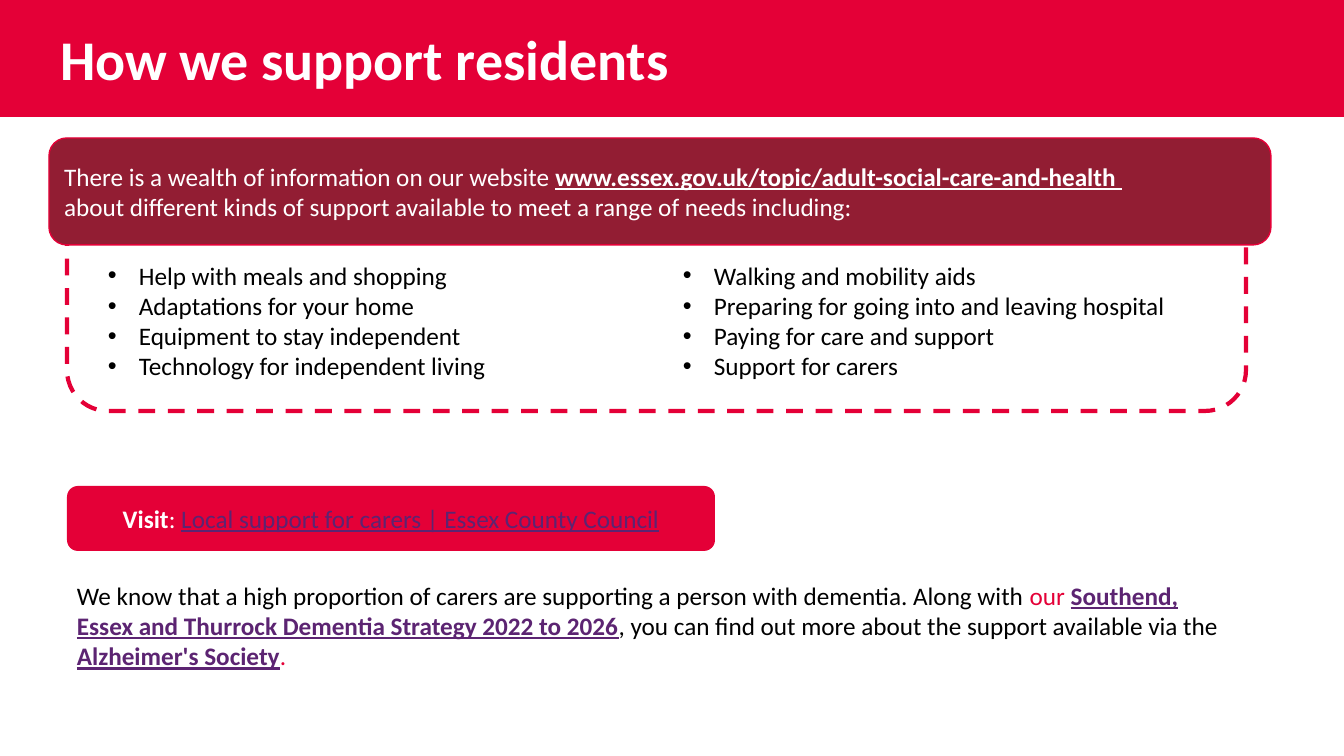
from lxml import etree
from pptx import Presentation
from pptx import util as u
from pptx.dml.color import RGBColor
from pptx.enum import dml, shapes, text
from pptx.oxml.ns import qn

RED = RGBColor(0xE4, 0x00, 0x37)
WINE = RGBColor(0x92, 0x1D, 0x33)
PLUM = RGBColor(0x5C, 0x24, 0x72)
WHITE = RGBColor(0xFF, 0xFF, 0xFF)
BLACK = RGBColor(0x00, 0x00, 0x00)
RECT = shapes.MSO_SHAPE.RECTANGLE
ROUND = shapes.MSO_SHAPE.ROUNDED_RECTANGLE


def px(n):
    """Turn pixels into EMU."""
    return u.Inches(n / 100.8)


def run(words, **form):
    """Pair some words with their format."""
    return words, form


class Deck:
    """Hold the style and the current slide."""

    def __init__(self, font, size):
        """Start a deck with one blank slide."""
        self.font, self.size = font, size
        self.show = Presentation()
        self.show.slide_width, self.show.slide_height = px(1344), px(756)
        self.slide = self.show.slides.add_slide(self.show.slide_layouts[6])

    def label(self, frame, lines, color, align=text.PP_ALIGN.LEFT, mark=None):
        """Fill a frame with lines, each a list of runs."""
        frame.word_wrap = True
        for i, line in enumerate(lines):
            para = frame.add_paragraph() if i else frame.paragraphs[0]
            para.alignment = align
            if mark:
                props = para._p.get_or_add_pPr()
                props.set("marL", str(px(31)))
                props.set("indent", str(-px(31)))
                face = etree.SubElement(props, qn("a:buFont"))
                face.set("typeface", "Arial")
                etree.SubElement(props, qn("a:buChar")).set("char", mark)
            for words, form in line:
                part = para.add_run()
                part.text = words
                font = part.font
                font.name = self.font
                font.size = u.Pt(form.get("size", self.size))
                font.bold = form.get("bold", False)
                font.underline = form.get("under", False)
                font.color.rgb = form.get("color", color)

    def box(self, kind, spot, fill=None, line=None, width=1, dash=None):
        """Add a preset shape and return its text frame."""
        shape = self.slide.shapes.add_shape(kind, *map(px, spot))
        shape.shadow.inherit = False
        if fill is None:
            shape.fill.background()
        else:
            shape.fill.solid()
            shape.fill.fore_color.rgb = fill
        if line is None:
            shape.line.fill.background()
        else:
            shape.line.color.rgb = line
            shape.line.width = u.Pt(width)
            shape.line.dash_style = dash
        frame = shape.text_frame
        frame.vertical_anchor = text.MSO_ANCHOR.MIDDLE
        return frame

    def note(self, spot, lines, cols=1, mark=None):
        """Add a text box, in columns if asked."""
        shape = self.slide.shapes.add_textbox(*map(px, spot))
        if cols > 1:
            shape.element.txBody.bodyPr.set("numCol", str(cols))
        self.label(shape.text_frame, lines, BLACK, mark=mark)


def main():
    """Build the slide and save it."""
    deck = Deck("Calibri", 18)
    link = {"color": PLUM, "bold": True, "under": True}

    deck.box(ROUND, (67, 166, 1179, 245), line=RED, width=3,
             dash=dml.MSO_LINE.DASH)
    topics = ["Help with meals and shopping", "Adaptations for your home",
              "Equipment to stay independent",
              "Technology for independent living",
              "Walking and mobility aids",
              "Preparing for going into and leaving hospital",
              "Paying for care and support", "Support for carers"]
    deck.note((98, 255, 1170, 107), [[run(t)] for t in topics],
              cols=2, mark="•")

    title = deck.box(RECT, (0, 0, 1344, 117), fill=RED)
    title.margin_left = px(60)
    deck.label(title, [[run("How we support residents", size=40, bold=True)]],
               WHITE)

    intro = deck.box(ROUND, (49, 138, 1222, 107), fill=WINE, line=RED)
    deck.label(intro, [
        [run("There is a wealth of information on our website "),
         run("www.essex.gov.uk/topic/adult-social-care-and-health ",
             bold=True, under=True)],
        [run("about different kinds of support available to meet "
             "a range of needs including:")]], WHITE)

    visit = deck.box(ROUND, (67, 486, 648, 65), fill=RED)
    deck.label(visit, [
        [run("Visit", bold=True), run(": "),
         run("Local support for carers | Essex County Council",
             color=PLUM, under=True)]], WHITE, text.PP_ALIGN.CENTER)

    deck.note((67, 575, 1182, 132), [
        [run("We know that a high proportion of carers are supporting "
             "a person with dementia. Along with "),
         run("our ", color=RED),
         run("Southend, Essex and Thurrock Dementia Strategy 2022 to 2026",
             **link),
         run(", you can find out more about the support available via the "),
         run("Alzheimer's Society", **link),
         run(".", color=RED)]])

    deck.show.save("out.pptx")


if __name__ == "__main__":
    main()
